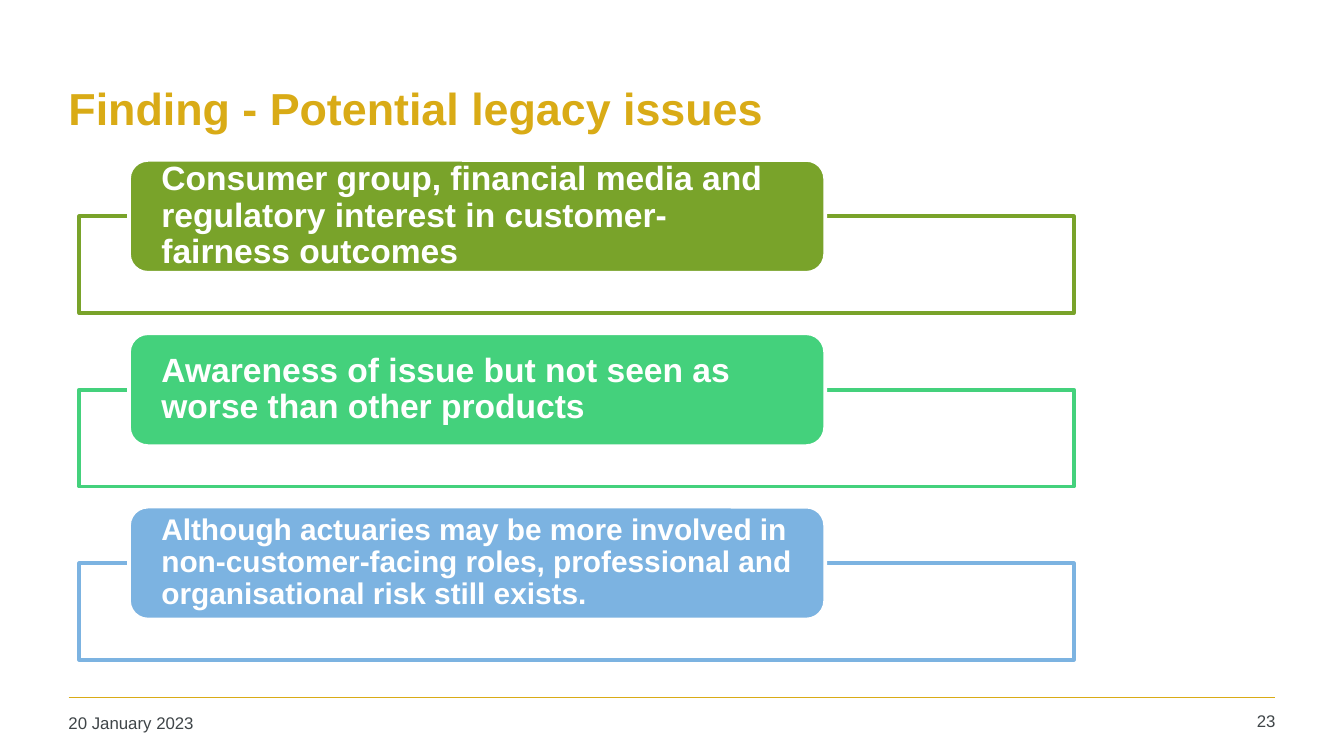
from dataclasses import dataclass

from pptx import Presentation
from pptx.dml.color import RGBColor
from pptx.enum.shapes import MSO_CONNECTOR, MSO_SHAPE
from pptx.enum.text import MSO_ANCHOR, PP_ALIGN
from pptx.oxml.ns import qn
from pptx.util import Inches, Pt
from lxml.etree import SubElement


@dataclass(frozen=True)
class Theme:
    font: str = "Arial"
    gold: RGBColor = RGBColor(0xD9, 0xAB, 0x16)
    gray: RGBColor = RGBColor(0x3F, 0x45, 0x48)
    white: RGBColor = RGBColor(0xFF, 0xFF, 0xFF)
    olive: RGBColor = RGBColor(0x79, 0xA3, 0x2A)
    green: RGBColor = RGBColor(0x44, 0xD1, 0x7C)
    blue: RGBColor = RGBColor(0x7C, 0xB3, 0xE1)
    title_size: Pt = Pt(24)
    large_size: Pt = Pt(18)
    medium_size: Pt = Pt(16)
    footer_size: Pt = Pt(9)


theme = Theme()


def write(shape, text, size, color, inset, bold=False,
          anchor=MSO_ANCHOR.TOP, align=PP_ALIGN.LEFT):
    """Fill the shape with one paragraph; inset is (horizontal, vertical) inches."""
    frame = shape.text_frame
    frame.word_wrap = True
    frame.vertical_anchor = anchor
    frame.margin_left = frame.margin_right = Inches(inset[0])
    frame.margin_top = frame.margin_bottom = Inches(inset[1])
    paragraph = frame.paragraphs[0]
    paragraph.text = text
    paragraph.alignment = align
    paragraph.font.name = theme.font
    paragraph.font.size = size
    paragraph.font.bold = bold
    paragraph.font.color.rgb = color
    return paragraph


def add_box(preset, left, top, width, height, fill, line):
    shape = slide.shapes.add_shape(
        preset, Inches(left), Inches(top), Inches(width), Inches(height))
    shape.shadow.inherit = False
    shape.fill.solid()
    shape.fill.fore_color.rgb = fill
    shape.line.color.rgb = line
    shape.line.width = Pt(2)
    return shape


presentation = Presentation()
presentation.slide_width = Inches(10)
presentation.slide_height = Inches(10) * 9 // 16
slide = presentation.slides.add_slide(presentation.slide_layouts[6])

# Footer rule
rule = slide.shapes.add_connector(
    MSO_CONNECTOR.STRAIGHT, Inches(0.51), Inches(5.19), Inches(9.49), Inches(5.19))
rule.line.color.rgb = theme.gold
rule.line.width = Pt(1)
SubElement(rule._element.spPr, qn("a:effectLst"))

# Title and footer
text_inset = (0.08, 0.04)
title = slide.shapes.add_textbox(Inches(0.43), Inches(0.33), Inches(9.07), Inches(0.94))
write(title, "Finding - Potential legacy issues", theme.title_size, theme.gold,
      text_inset, bold=True, anchor=MSO_ANCHOR.MIDDLE)
date = slide.shapes.add_textbox(Inches(0.43), Inches(5.26), Inches(2.2), Inches(0.27))
write(date, "20 January 2023", theme.footer_size, theme.gray, text_inset)
number = slide.shapes.add_textbox(Inches(8.86), Inches(5.25), Inches(0.71), Inches(0.28))
write(number, "23", theme.footer_size, theme.gray, text_inset, align=PP_ALIGN.RIGHT)

# Findings: a coloured label over the top edge of each frame
findings = [
    ("Consumer group, financial media and regulatory interest in customer-fairness outcomes",
     theme.olive, theme.large_size),
    ("Awareness of issue but not seen as worse than other products",
     theme.green, theme.large_size),
    ("Although actuaries may be more involved in non-customer-facing roles, "
     "professional and organisational risk still exists.",
     theme.blue, theme.medium_size),
]
first_top, pitch, label_height = 1.19, 1.29, 0.84
for index, (text, color, size) in enumerate(findings):
    top = first_top + index * pitch
    frame_box = add_box(MSO_SHAPE.RECTANGLE, 0.59, top + label_height / 2, 7.4, 0.72,
                        theme.white, color)
    white_fill = frame_box._element.spPr.find(qn("a:solidFill"))
    SubElement(white_fill[0], qn("a:alpha"), val="90000")
    label = add_box(MSO_SHAPE.ROUNDED_RECTANGLE, 0.96, top, 5.18, label_height,
                    color, theme.white)
    paragraph = write(label, text, size, theme.white, (0.2, 0), bold=True,
                      anchor=MSO_ANCHOR.MIDDLE)
    paragraph.line_spacing = 0.9

presentation.save("out.pptx")
